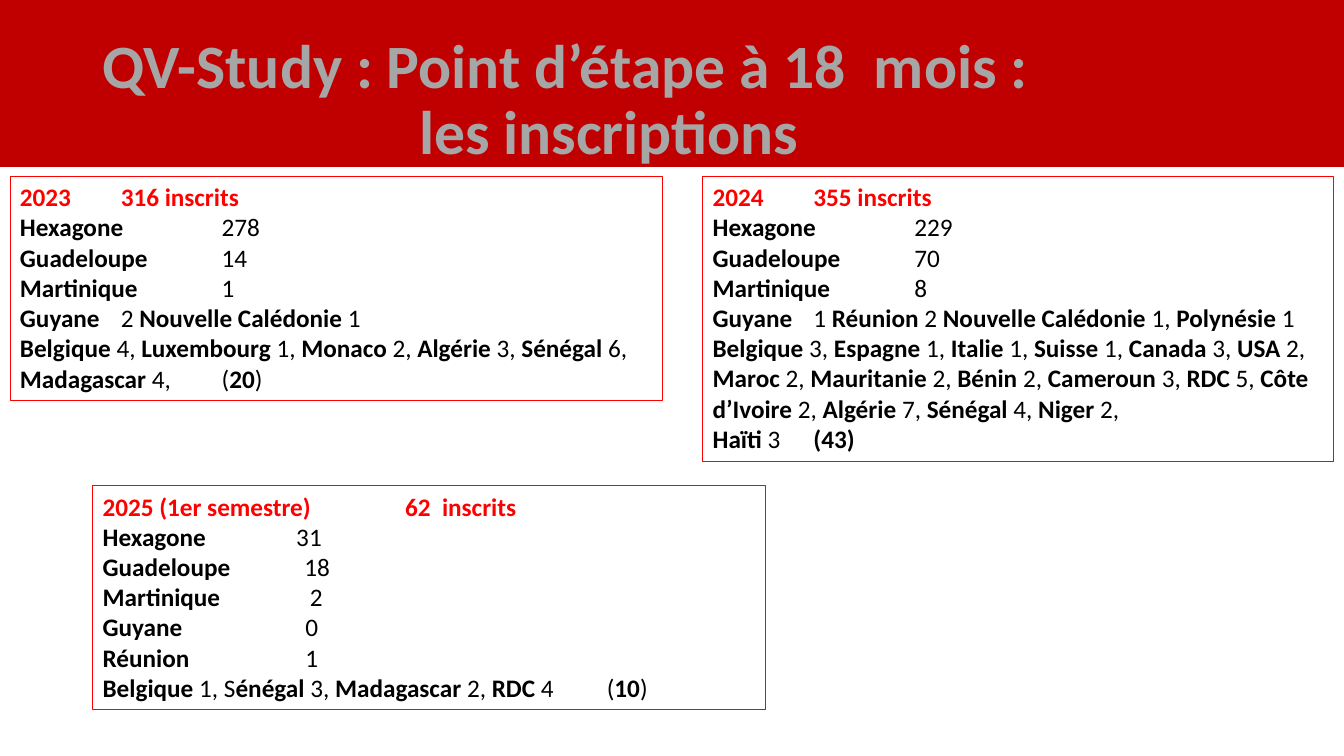
from lxml.etree import SubElement
from pptx import Presentation
from pptx.dml.color import RGBColor
from pptx.enum.shapes import MSO_SHAPE as Shape
from pptx.enum.text import MSO_ANCHOR as Anchor, MSO_AUTO_SIZE as Fit, PP_ALIGN as Align
from pptx.oxml.ns import qn
from pptx.util import Inches, Pt

BRICK = RGBColor(0xC0, 0x00, 0x00)
RED = RGBColor(0xFF, 0x00, 0x00)
GREY = RGBColor(0xA6, 0xA6, 0xA6)
BLACK = RGBColor(0x00, 0x00, 0x00)

# Tab stops at every inch, unless a line has its own
STOPS = (1, 2, 3, 4, 5)

# Each box: position, heading, then lines as (text, tab stops); *...* is bold
BOXES = [
    ((0.1, 1.75, 6.47, 2.22), "2023\t316 inscrits", [
        ("*Hexagone*\t278", STOPS),
        ("*Guadeloupe*\t14", STOPS),
        ("*Martinique*\t1", STOPS),
        ("*Guyane*\t2 *Nouvelle Calédonie *1", STOPS),
        ("*Belgique* 4, *Luxembourg* 1, *Monaco* 2, *Algérie* 3, *Sénégal* 6, "
         "*Madagascar* 4, \t(*20*)", STOPS),
    ]),
    ((6.97, 1.75, 6.26, 2.83), "2024\t355 inscrits", [
        ("*Hexagone*\t229", STOPS),
        ("*Guadeloupe*\t70", STOPS),
        ("*Martinique*\t8", STOPS),
        ("*Guyane*\t1 *Réunion* 2* Nouvelle Calédonie *1, *Polynésie *1", STOPS),
        ("*Belgique* 3, *Espagne* 1, *Italie* 1, *Suisse* 1, *Canada* 3, *USA* 2, "
         "*Maroc* 2, *Mauritanie* 2, *Bénin *2, *Cameroun *3, *RDC* 5, "
         "*Côte d’Ivoire *2, *Algérie *7, *Sénégal *4, *Niger* 2,", STOPS),
        ("*Haïti *3\t*(43)*", STOPS),
    ]),
    ((0.92, 4.82, 6.67, 2.22), "2025 (1er semestre)\t62  inscrits", [
        ("*Hexagone*\t31", (1.92,)),
        ("*Guadeloupe*\t18", STOPS),
        ("*Martinique*\t 2", STOPS),
        ("*Guyane*\t0", (2.01,)),
        ("*Réunion *\t1", (2.01,)),
        ("*Belgique* 1, S*énégal* 3, *Madagascar* 2, *RDC* 4\t(*10*)", STOPS),
    ]),
]


class Page:
    font = "Calibri"
    size = 18

    def __init__(self, slide):
        self.slide = slide

    def style(self, run, color, size, bold):
        run.font.name = self.font
        run.font.size = Pt(size)
        run.font.bold = bold
        run.font.color.rgb = color

    def tabs(self, para, stops):
        tabs = SubElement(para._p.get_or_add_pPr(), qn("a:tabLst"))
        for stop in stops:
            SubElement(tabs, qn("a:tab"), pos=str(Inches(stop)), algn="l")

    def rect(self, place, fill, line, width):
        shape = self.slide.shapes.add_shape(Shape.RECTANGLE, *map(Inches, place))
        shape.shadow.inherit = False
        if fill is None:
            shape.fill.background()
        else:
            shape.fill.solid()
            shape.fill.fore_color.rgb = fill
        shape.line.color.rgb = line
        shape.line.width = Pt(width)
        return shape

    def title(self, place, text):
        frame = self.slide.shapes.add_textbox(*map(Inches, place)).text_frame
        frame.word_wrap = True
        frame.vertical_anchor = Anchor.MIDDLE
        para = frame.paragraphs[0]
        para.text = text
        para.line_spacing = 0.9
        self.tabs(para, STOPS)
        for run in para.runs:
            self.style(run, GREY, 44, True)

    def line(self, para, text, color, stops):
        para.alignment = Align.LEFT
        self.tabs(para, stops)
        for i, part in enumerate(text.split("*")):
            if part:
                run = para.add_run()
                run.text = part
                self.style(run, color, self.size, i % 2 == 1)

    def box(self, place, head, lines):
        frame = self.rect(place, None, RED, 0.75).text_frame
        frame.word_wrap = True
        frame.auto_size = Fit.SHAPE_TO_FIT_TEXT
        frame.vertical_anchor = Anchor.TOP
        self.line(frame.paragraphs[0], f"*{head}*", RED, STOPS)
        for text, stops in lines:
            self.line(frame.add_paragraph(), text, BLACK, stops)


def main():
    deck = Presentation()
    deck.slide_width = Inches(13.33)
    deck.slide_height = Inches(7.5)
    page = Page(deck.slides.add_slide(deck.slide_layouts[6]))

    # Banner and title
    page.rect((0, 0, 13.33, 1.65), BRICK, BRICK, 1)
    page.title((0.92, 0.28, 11.5, 1.45),
               "QV-Study : Point d’étape à 18  mois :\v\t\t\t les inscriptions")

    # Enrolments by year
    for place, head, lines in BOXES:
        page.box(place, head, lines)

    deck.save("out.pptx")


if __name__ == "__main__":
    main()
